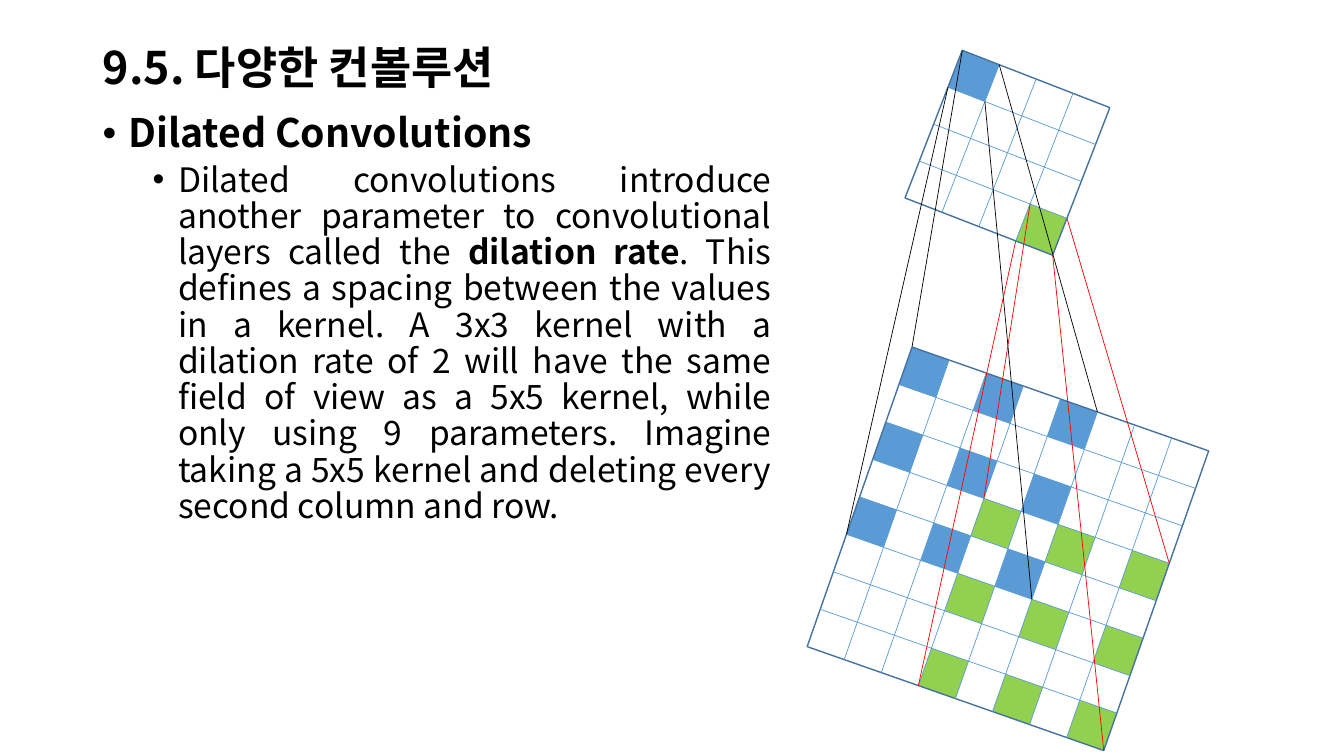
from dataclasses import dataclass
from itertools import product
from math import cos, radians, sin

from lxml import etree
from pptx import Presentation
from pptx.dml.color import RGBColor
from pptx.enum.shapes import MSO_CONNECTOR, MSO_SHAPE
from pptx.enum.text import MSO_ANCHOR, PP_ALIGN
from pptx.oxml.ns import qn
from pptx.shapes.autoshape import Shape
from pptx.shapes.connector import Connector
from pptx.text.text import TextFrame, _Paragraph
from pptx.util import Cm, Pt

RECT, LINE = MSO_SHAPE.RECTANGLE, MSO_CONNECTOR.STRAIGHT
TOP, MIDDLE = MSO_ANCHOR.TOP, MSO_ANCHOR.MIDDLE
LEFT, JUSTIFY = PP_ALIGN.LEFT, PP_ALIGN.JUSTIFY
FONT = "Noto Sans CJK KR"
COLORS = {"ink": "000000", "blue": "5B9BD5", "green": "92D050",
          "edge": "43739E", "red": "FF0000"}
Point = tuple[float, float]


@dataclass
class Grid:
    """A turned square grid; lengths in cm, angle in degrees."""
    x: float
    y: float
    width: float
    height: float
    count: int
    angle: float

    def point(self, col: float, row: float) -> Point:
        """Slide position of a place counted in columns and rows."""
        u = (col / self.count - 0.5) * self.width
        v = (row / self.count - 0.5) * self.height
        turn = radians(self.angle)
        return (self.x + u * cos(turn) - v * sin(turn),
                self.y + u * sin(turn) + v * cos(turn))


@dataclass
class Kernel:
    """One output cell and the dilated input cells it reads."""
    start: int
    fill: str
    ray: str


OUTPUT = Grid(25.39, 3.85, 3.99, 3.99, 4, 21.2)
INPUT = Grid(25.4, 13.83, 7.92, 8, 8, 19.3)
KERNELS = [Kernel(0, "blue", "ink"), Kernel(3, "green", "red")]
SIZE, RATE = 3, 2
SPAN = (SIZE - 1) * RATE + 1

deck = Presentation()
deck.slide_width, deck.slide_height = Cm(33.87), Cm(19.05)
slide = deck.slides.add_slide(deck.slide_layouts[6])


def color(name: str) -> RGBColor:
    return RGBColor.from_string(COLORS[name])


def add_box(x: float, y: float, width: float, height: float, anchor: MSO_ANCHOR) -> TextFrame:
    frame = slide.shapes.add_textbox(Cm(x), Cm(y), Cm(width), Cm(height)).text_frame
    frame.word_wrap = True
    frame.vertical_anchor = anchor
    return frame


def style(para: _Paragraph, size: int, bold: bool = False, before: int = 0,
          indent: float = 0, align: PP_ALIGN = LEFT) -> None:
    """Format a paragraph; an indent also gives it a bullet."""
    para.alignment = align
    para.line_spacing = 0.9
    para.space_before = Pt(before)
    font = para.font
    font.name, font.size, font.bold = FONT, Pt(size), bold
    font.color.rgb = color("ink")
    props = para._p.get_or_add_pPr()
    base = props.find(qn("a:defRPr"))
    etree.SubElement(base, qn("a:ea"), typeface=FONT)
    if indent:
        props.set("marL", str(Cm(indent)))
        props.set("indent", str(Cm(-0.64)))
        face = etree.Element(qn("a:buFont"), typeface="Arial")
        mark = etree.Element(qn("a:buChar"), char="•")
        base.addprevious(face)
        base.addprevious(mark)


def add_rect(grid: Grid, center: Point, cells: int) -> Shape:
    width, height = (side * cells / grid.count for side in (grid.width, grid.height))
    x, y = center
    rect = slide.shapes.add_shape(RECT, Cm(x - width / 2), Cm(y - height / 2),
                                  Cm(width), Cm(height))
    rect.rotation = grid.angle
    rect.shadow.inherit = False
    return rect


def add_cell(grid: Grid, col: int, row: int, fill: str) -> None:
    cell = add_rect(grid, grid.point(col + 0.5, row + 0.5), 1)
    cell.fill.solid()
    cell.fill.fore_color.rgb = color(fill)
    cell.line.fill.background()


def add_line(start: Point, end: Point, tint: str) -> Connector:
    line = slide.shapes.add_connector(LINE, *map(Cm, start + end))
    line.line.color.rgb = color(tint)
    line.line.width = Pt(0.5)
    etree.SubElement(line._element.spPr, qn("a:effectLst"))
    return line


def join(line: Connector, frame: Shape, sides: tuple[int, int]) -> None:
    """Join both ends to a turned frame, keeping them where they are."""
    ends = line.begin_x, line.begin_y, line.end_x, line.end_y
    line.begin_connect(frame, sides[0])
    line.end_connect(frame, sides[1])
    line.begin_x, line.begin_y, line.end_x, line.end_y = ends


def add_grid(grid: Grid) -> None:
    frame = add_rect(grid, (grid.x, grid.y), grid.count)
    frame.fill.background()
    frame.line.color.rgb = color("edge")
    frame.line.width = Pt(1)
    for i in range(1, grid.count):
        down = add_line(grid.point(i, 0), grid.point(i, grid.count), "blue")
        across = add_line(grid.point(0, i), grid.point(grid.count, i), "blue")
        if 2 * i == grid.count:
            join(down, frame, (0, 2))
            join(across, frame, (1, 3))


title = add_box(2.34, 1.02, 29.21, 1.5, MIDDLE).paragraphs[0]
title.text = "9.5. 다양한 컨볼루션"
style(title, 32, bold=True)

body = add_box(2.34, 2.74, 17.35, 15.47, TOP)
head = body.paragraphs[0]
head.text = "Dilated Convolutions"
style(head, 28, bold=True, before=10, indent=0.64)

detail = body.add_paragraph()
detail.level = 1
style(detail, 24, before=5, indent=1.9, align=JUSTIFY)
for text, bold in [
    ("Dilated convolutions introduce another parameter to convolutional "
     "layers called the ", False),
    ("dilation rate", True),
    (". This defines a spacing between the values in a kernel. A 3x3 kernel "
     "with a dilation rate of 2 will have the same field of view as a 5x5 "
     "kernel, while only using 9 parameters. Imagine taking a 5x5 kernel and "
     "deleting every second column and row.", False),
]:
    run = detail.add_run()
    run.text = text
    if bold:
        run.font.bold = True

for kernel in KERNELS:
    add_cell(OUTPUT, kernel.start, kernel.start, kernel.fill)
    taps = range(kernel.start, kernel.start + SPAN, RATE)
    for col, row in product(taps, taps):
        add_cell(INPUT, col, row, kernel.fill)

add_grid(OUTPUT)
add_grid(INPUT)

for kernel in KERNELS:
    for right, low in product((0, 1), (0, 1)):
        add_line(OUTPUT.point(kernel.start + right, kernel.start + low),
                 INPUT.point(kernel.start + right * SPAN, kernel.start + low * SPAN),
                 kernel.ray)

deck.save("out.pptx")
